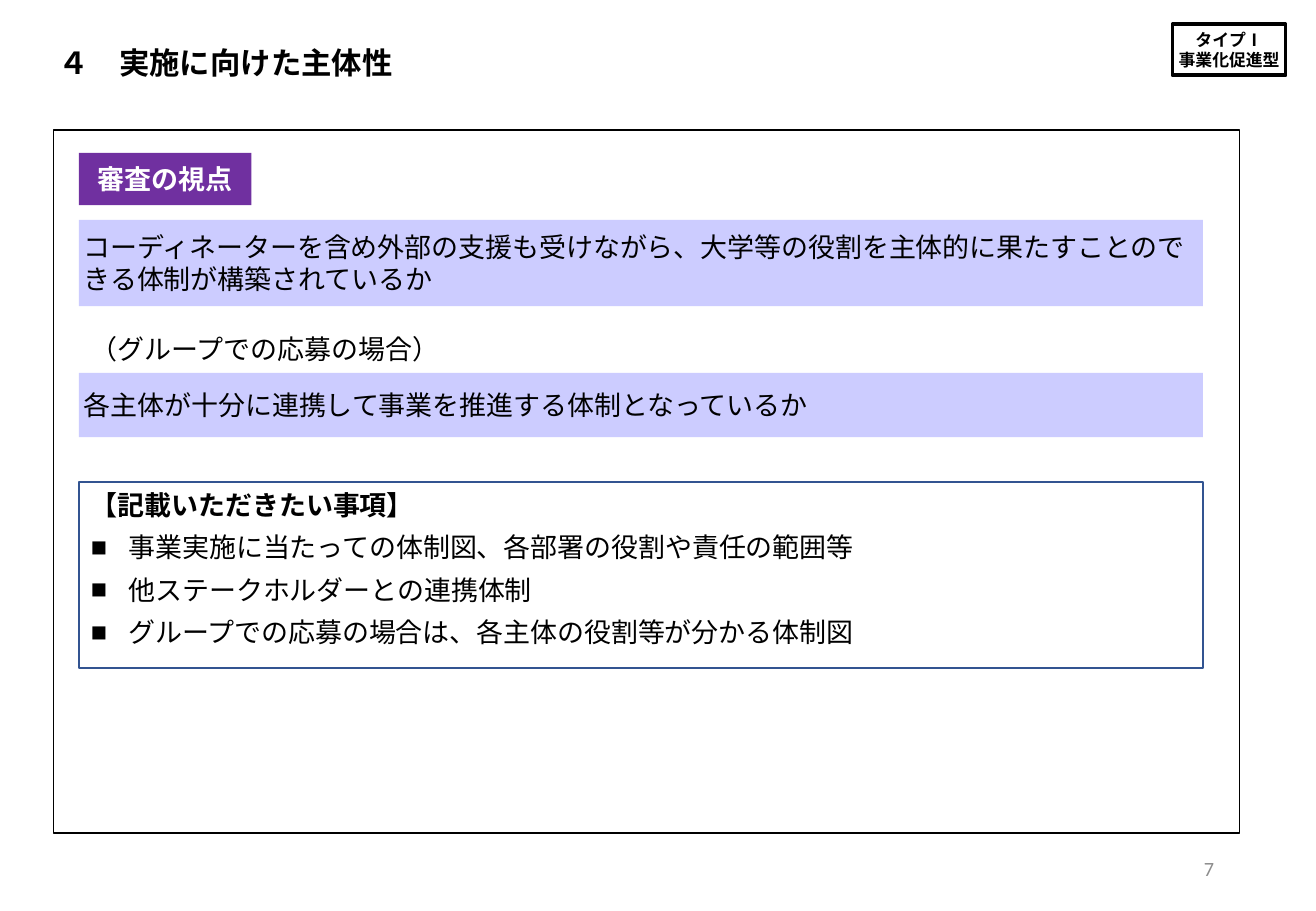
from lxml import etree
from pptx import Presentation
from pptx.dml.color import RGBColor
from pptx.enum.lang import MSO_LANGUAGE_ID
from pptx.enum.shapes import MSO_SHAPE
from pptx.enum.text import MSO_ANCHOR, PP_ALIGN
from pptx.oxml.ns import qn
from pptx.util import Inches, Pt

RECTANGLE = MSO_SHAPE.RECTANGLE
JAPANESE = MSO_LANGUAGE_ID.JAPANESE
TOP, MIDDLE = MSO_ANCHOR.TOP, MSO_ANCHOR.MIDDLE
LEFT, CENTER, RIGHT = PP_ALIGN.LEFT, PP_ALIGN.CENTER, PP_ALIGN.RIGHT
TITLE_ONLY = 5

BLACK, WHITE, GREY = "000000", "FFFFFF", "8C8C8C"
PURPLE, LAVENDER, NAVY = "7030A0", "CCCCFF", "325491"
TIGHT = (0.04, 0.04)
ROOMY = (0.1, 0.05)


def color(hex_string):
    return RGBColor.from_string(hex_string)


def add_bullet(paragraph, character="■", indent=0.31):
    properties = paragraph._p.get_or_add_pPr()
    properties.set("marL", str(Inches(indent)))
    properties.set("indent", str(-Inches(indent)))
    etree.SubElement(properties, qn("a:buFont")).set("typeface", "Arial")
    etree.SubElement(properties, qn("a:buChar")).set("char", character)


def write_text(shape, lines, size=16, font="Arial", hex_color=BLACK, bold=False,
               align=LEFT, anchor=MIDDLE, margins=TIGHT, wrap=True, space_before=0):
    """Fill a shape with one paragraph per line and return the paragraphs."""
    frame = shape.text_frame
    frame.text = "\n".join(lines)
    frame.word_wrap = wrap
    frame.vertical_anchor = anchor
    frame.margin_left = frame.margin_right = Inches(margins[0])
    frame.margin_top = frame.margin_bottom = Inches(margins[1])
    for paragraph in frame.paragraphs:
        paragraph.alignment = align
        paragraph.space_before = Pt(space_before)
        for run in paragraph.runs:
            run.font.name = font
            run.font.size = Pt(size)
            run.font.bold = bold
            run.font.color.rgb = color(hex_color)
            run.font.language_id = JAPANESE
    return frame.paragraphs


def add_box(slide, left, top, width, height, fill=None, line=None, line_width=1):
    shape = slide.shapes.add_shape(
        RECTANGLE, Inches(left), Inches(top), Inches(width), Inches(height))
    shape.shadow.inherit = False
    if fill:
        shape.fill.solid()
        shape.fill.fore_color.rgb = color(fill)
    else:
        shape.fill.background()
    if line:
        shape.line.color.rgb = color(line)
        shape.line.width = Pt(line_width)
    else:
        shape.line.fill.background()
    return shape


def add_label(slide, left, top, width, height, text, **text_format):
    label = slide.shapes.add_textbox(
        Inches(left), Inches(top), Inches(width), Inches(height))
    write_text(label, [text], font="Calibri", margins=ROOMY, **text_format)


def place_title(slide, left, top, width, height, text):
    title = slide.shapes.title
    title.left, title.top = Inches(left), Inches(top)
    title.width, title.height = Inches(width), Inches(height)
    write_text(title, [text], size=18, font="Calibri", bold=True)


def add_type_badge(slide, left, top, width, height, lines):
    badge = add_box(slide, left, top, width, height, line=BLACK, line_width=2.25)
    write_text(badge, lines, size=10, bold=True, align=CENTER, wrap=False)


def add_criteria(slide, left, top, width):
    """Heading tag with the two review criteria below it."""
    tag = add_box(slide, left, top, 1.42, 0.43, fill=PURPLE)
    write_text(tag, ["審査の視点"], hex_color=WHITE, bold=True, align=CENTER)
    criteria = [
        (0.55, 0.71, "コーディネーターを含め外部の支援も受けながら、"
                     "大学等の役割を主体的に果たすことのできる体制が構築されているか"),
        (1.81, 0.53, "各主体が十分に連携して事業を推進する体制となっているか"),
    ]
    for offset, height, text in criteria:
        bar = add_box(slide, left, top + offset, width, height, fill=LAVENDER)
        write_text(bar, [text])
    add_label(slide, left, top + 1.43, 3.76, 0.37, "（グループでの応募の場合）", anchor=TOP)


def add_requested_items(slide, left, top, width, height, heading, items):
    box = add_box(slide, left, top, width, height, fill=WHITE, line=NAVY, line_width=1.5)
    paragraphs = write_text(box, [heading, *items], anchor=TOP, margins=ROOMY, space_before=6)
    paragraphs[0].runs[0].font.bold = True
    for paragraph in paragraphs[1:]:
        add_bullet(paragraph)


def add_content_panel(slide, left, top, width, height):
    add_box(slide, left, top, width, height, fill=WHITE, line=BLACK)
    inner_left, inner_width = left + 0.21, 9.25
    add_criteria(slide, inner_left, top + 0.19, inner_width)
    add_requested_items(
        slide, inner_left, top + 2.9, inner_width, 1.53, "【記載いただきたい事項】",
        ["事業実施に当たっての体制図、各部署の役割や責任の範囲等",
         "他ステークホルダーとの連携体制",
         "グループでの応募の場合は、各主体の役割等が分かる体制図"])


def main():
    presentation = Presentation()
    presentation.slide_width, presentation.slide_height = Inches(10.83), Inches(7.5)
    slide = presentation.slides.add_slide(presentation.slide_layouts[TITLE_ONLY])

    add_type_badge(slide, 9.65, 0.2, 0.93, 0.42, ["タイプⅠ", "事業化促進型"])
    place_title(slide, 0.44, 0.32, 4.05, 0.38, "４　実施に向けた主体性")
    add_content_panel(slide, 0.44, 1.07, 9.76, 5.79)
    add_label(slide, 7.65, 6.95, 2.44, 0.4, "7", size=12, hex_color=GREY, align=RIGHT)

    presentation.save("out.pptx")


if __name__ == "__main__":
    main()
